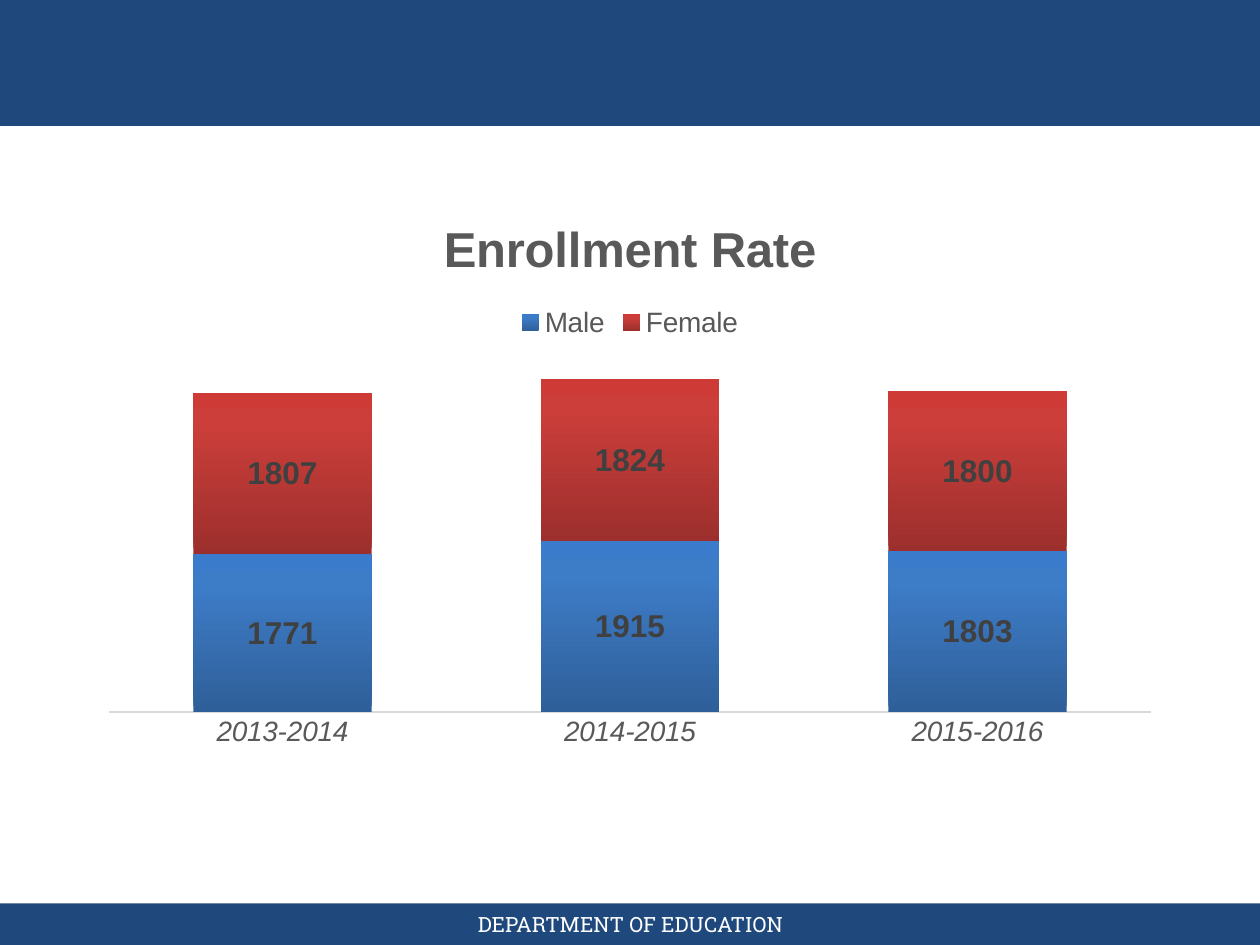
"""Build the enrollment rate slide with a stacked column chart."""
import lxml.etree
import pptx
import pptx.chart.data
import pptx.dml.color
import pptx.enum.chart
import pptx.enum.shapes
import pptx.enum.text
import pptx.oxml
import pptx.oxml.ns
import pptx.util

Inches = pptx.util.Inches
qn = pptx.oxml.ns.qn

NAVY = "1F497D"
BANDS = [(0, 7.17, 10, 0.33), (0, 0, 10, 1)]
FOOTER = ("DEPARTMENT OF EDUCATION", (3.42, 7.17, 3.17, 0.33))
CHART_BOX = (0.69, 1.52, 8.62, 4.49)
PLOT = {"x": 0.02, "y": 0.29, "w": 0.96, "h": 0.63}
TITLE = "Enrollment Rate"
YEARS = ["2013-2014", "2014-2015", "2015-2016"]
SERIES = [
    ("Male", [1771, 1915, 1803], [(0, "2F5F99"), (80, "3D7CC7"), (100, "3A7CCB")]),
    ("Female", [1807, 1824, 1800], [(0, "9C2F2D"), (80, "CB3E3A"), (100, "CE3B37")]),
]
FORMATS = {
    "footer": {"name": "Roboto Slab", "size": 12, "color": "FFFFFF"},
    "title": {"name": "Arial", "size": 28, "color": "595959", "bold": True},
    "legend": {"name": "Arial", "size": 16, "color": "595959"},
    "years": {"name": "Arial", "size": 16, "color": "595959", "italic": True, "bold": False},
    "values": {"name": "Arial", "size": 18, "color": "404040", "bold": True},
}


def rgb(value):
    return pptx.dml.color.RGBColor.from_string(value)


def style(font, kind):
    for key, value in FORMATS[kind].items():
        if key == "color":
            font.color.rgb = rgb(value)
        else:
            setattr(font, key, pptx.util.Pt(value) if key == "size" else value)


def add_band(s, box):
    sp = s.shapes.add_shape(pptx.enum.shapes.MSO_SHAPE.RECTANGLE, *map(Inches, box))
    sp.shadow.inherit = False
    sp.fill.solid()
    sp.fill.fore_color.rgb = rgb(NAVY)
    sp.line.fill.background()


def add_footer(s, text, box):
    tf = s.shapes.add_textbox(*map(Inches, box)).text_frame
    tf.word_wrap = True
    tf.vertical_anchor = pptx.enum.text.MSO_ANCHOR.MIDDLE
    p = tf.paragraphs[0]
    p.alignment = pptx.enum.text.PP_ALIGN.CENTER
    r = p.add_run()
    r.text = text
    style(r.font, "footer")


def fill_gradient(fill, stops):
    fill.gradient()
    fill.gradient_angle = 90
    gs_list = fill.gradient_stops
    parent = gs_list[0]._gs.getparent()
    for child in list(parent):
        parent.remove(child)
    for pos, value in stops:
        gs = lxml.etree.SubElement(parent, qn("a:gs"), pos=str(pos * 1000))
        lxml.etree.SubElement(gs, qn("a:srgbClr"), val=value)


def place_plot(chart):
    area = chart._chartSpace.find(".//" + qn("c:plotArea"))
    for old in area.findall(qn("c:layout")):
        area.remove(old)
    layout = lxml.etree.Element(qn("c:layout"))
    manual = lxml.etree.SubElement(layout, qn("c:manualLayout"))
    settings = {"layoutTarget": "inner", "xMode": "edge", "yMode": "edge", **PLOT}
    for tag, value in settings.items():
        lxml.etree.SubElement(manual, qn("c:" + tag), val=str(value))
    area.insert(0, layout)


def add_chart(s):
    data = pptx.chart.data.CategoryChartData()
    data.categories = YEARS
    for name, values, _ in SERIES:
        data.add_series(name, values)
    kind = pptx.enum.chart.XL_CHART_TYPE.COLUMN_STACKED
    chart = s.shapes.add_chart(kind, *map(Inches, CHART_BOX), data).chart
    chart.font.name = "Arial"
    chart.font.size = pptx.util.Pt(10)

    chart.has_title = True
    chart.chart_title.include_in_layout = False
    r = chart.chart_title.text_frame.paragraphs[0].add_run()
    r.text = TITLE
    style(r.font, "title")

    chart.has_legend = True
    chart.legend.position = pptx.enum.chart.XL_LEGEND_POSITION.TOP
    chart.legend.include_in_layout = False
    style(chart.legend.font, "legend")

    axis = chart.category_axis
    axis.major_tick_mark = pptx.enum.chart.XL_TICK_MARK.NONE
    axis.format.line.color.rgb = rgb("D9D9D9")
    axis.format.line.width = pptx.util.Pt(1)
    style(axis.tick_labels.font, "years")
    axis = chart.value_axis
    axis.visible = False
    axis.has_major_gridlines = False
    axis.minimum_scale, axis.maximum_scale = 0, 4000

    plot = chart.plots[0]
    plot.gap_width, plot.overlap, plot.vary_by_categories = 95, 100, False
    for series, (_, _, stops) in zip(plot.series, SERIES):
        fill_gradient(series.format.fill, stops)
        labels = series.data_labels
        labels.show_value = True
        labels.position = pptx.enum.chart.XL_LABEL_POSITION.CENTER
        style(labels.font, "values")
    place_plot(chart)


def main():
    prs = pptx.Presentation()
    prs.slide_width, prs.slide_height = Inches(10), Inches(7.5)
    s = prs.slides.add_slide(prs.slide_layouts[6])
    for box in BANDS:
        add_band(s, box)
    add_footer(s, *FOOTER)
    add_chart(s)
    prs.save("out.pptx")


if __name__ == "__main__":
    main()
